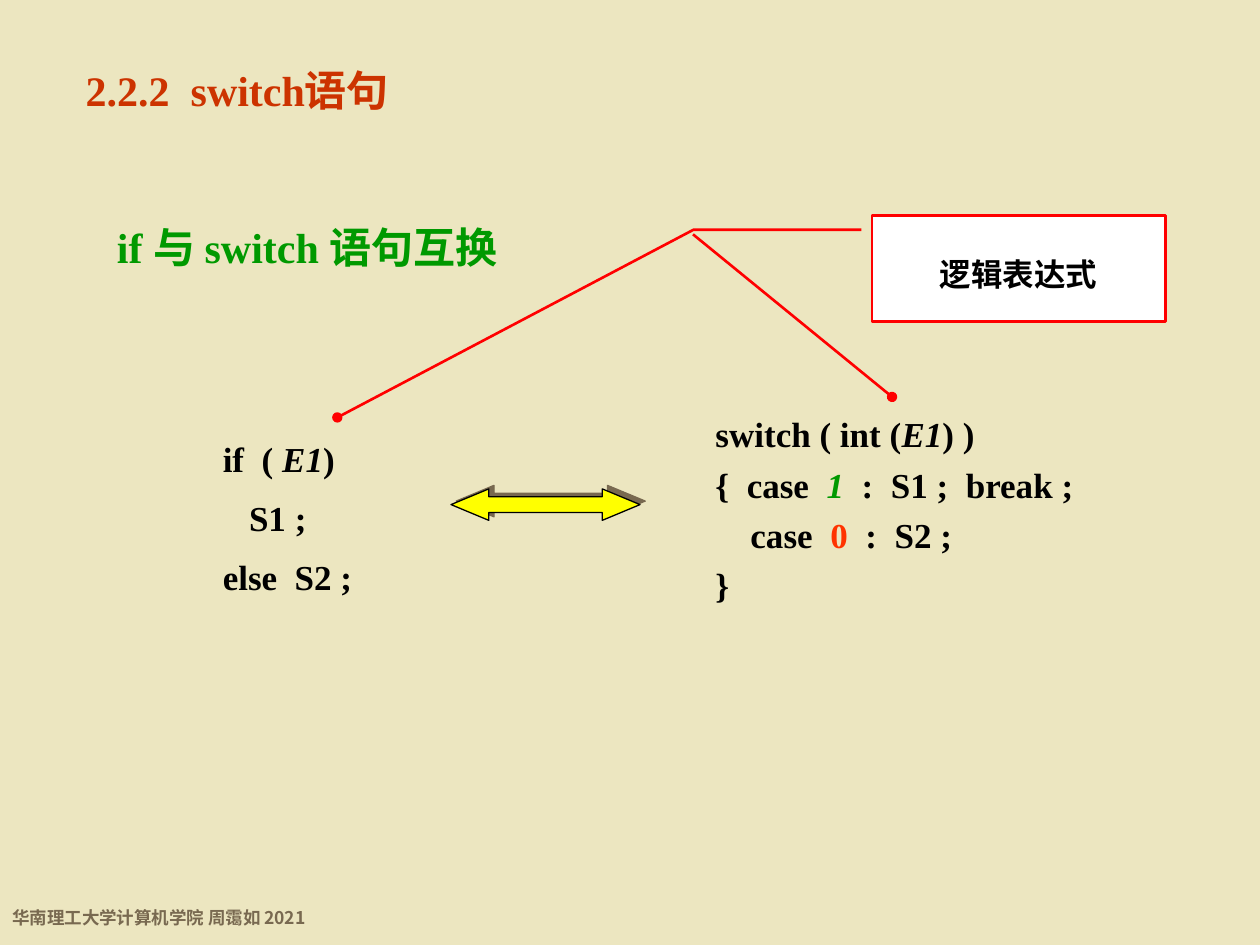
from pptx import Presentation
from pptx.dml.color import RGBColor
from pptx.enum.shapes import MSO_CONNECTOR, MSO_SHAPE
from pptx.enum.text import MSO_ANCHOR, MSO_AUTO_SIZE, PP_ALIGN
from pptx.oxml import parse_xml
from pptx.oxml.ns import nsdecls, qn
from pptx.util import Inches, Pt

SERIF, SANS = "Times New Roman", "Noto Sans CJK SC"
BLACK, RED, GREEN, BROWN = "000000", "FF0000", "009900", "786950"


def rgb(value):
    return RGBColor.from_string(value)


def box(*lengths):
    return [Inches(v) for v in lengths]


def write(tf, lines, size, color=BLACK, font=SERIF, spacing=1.0,
          align=PP_ALIGN.LEFT, wrap=True, fit=MSO_AUTO_SIZE.NONE):
    """Fill a frame; a line is a list of (text, font changes) pairs."""
    tf.word_wrap, tf.auto_size = wrap, fit
    tf.vertical_anchor = MSO_ANCHOR.MIDDLE
    for i, line in enumerate(lines):
        p = tf.paragraphs[0] if i == 0 else tf.add_paragraph()
        p.alignment, p.line_spacing = align, spacing
        for text, changes in line:
            r = p.add_run()
            r.text = text
            look = {"name": font, "size": Pt(size), "bold": True,
                    "italic": False, "color": color} | changes
            r.font.color.rgb = rgb(look.pop("color"))
            for name, value in look.items():
                setattr(r.font, name, value)
            ea = r.font._element.makeelement(qn("a:ea"), {"typeface": SANS})
            r.font._element.find(qn("a:latin")).addnext(ea)


def add_text(slide, area, lines, size, **style):
    tf = slide.shapes.add_textbox(*box(*area)).text_frame
    write(tf, lines, size, **style)


def add_title(slide, area, text):
    sp = slide.shapes.title
    sp.left, sp.top, sp.width, sp.height = box(*area)
    write(sp.text_frame, [[(text, {})]], 24, color="CC3300")


def style_line(line, color, width, oval_tail=False):
    line.color.rgb, line.width = rgb(color), Pt(width)
    if oval_tail:
        line._get_or_add_ln().append(
            parse_xml(f'<a:tailEnd {nsdecls("a")} type="oval"/>'))


def add_exchange_arrow(slide, area):
    sp = slide.shapes.add_shape(MSO_SHAPE.LEFT_RIGHT_ARROW, *box(*area))
    sp.adjustments[0], sp.adjustments[1] = 0.5, 1.2
    sp.fill.solid()
    sp.fill.fore_color.rgb = rgb("FFFF00")
    style_line(sp.line, BLACK, 0.75)
    sp._element.spPr.append(parse_xml(
        f'<a:effectLst {nsdecls("a")}><a:outerShdw dist="{Pt(3.6)}" '
        f'dir="{326 * 60000}" algn="ctr" rotWithShape="0">'
        f'<a:srgbClr val="{BROWN}"/></a:outerShdw></a:effectLst>'))


def add_callout(slide, area, text):
    """Callout whose two leaders point at E1 in each code block."""
    left, top, width, height = area
    group = slide.shapes.add_group_shape()
    sp = group.shapes.add_shape(MSO_SHAPE.LINE_CALLOUT_2, *box(*area))
    for i, value in enumerate([0.136, -0.036, 0.136, -0.608, 1.909, -1.821]):
        sp.adjustments[i] = value
    sp.shadow.inherit = False
    sp.fill.solid()
    sp.fill.fore_color.rgb = rgb("FFFFFF")
    style_line(sp.line, RED, 1.5, oval_tail=True)
    write(sp.text_frame, [[(text, {})]], 18, spacing=1.3,
          align=PP_ALIGN.CENTER)

    leader = group.shapes.add_connector(
        MSO_CONNECTOR.STRAIGHT,
        *box(left - 1.42, top + 0.15, left + 0.16, top + 1.44))
    style_line(leader.line, RED, 1.5, oval_tail=True)
    leader._element.spPr.append(parse_xml(f'<a:effectLst {nsdecls("a")}/>'))


def build_slide(prs):
    slide = prs.slides.add_slide(prs.slide_layouts[5])
    slide.background.fill.solid()
    slide.background.fill.fore_color.rgb = rgb("ECE6C0")
    grow = MSO_AUTO_SIZE.SHAPE_TO_FIT_TEXT
    italic, sans = {"italic": True}, {"name": SANS}

    add_text(slide, (0, 7.08, 2.66, 0.34),
             [[("华南理工大学计算机学院 周霭如 2021", {})]], 10,
             color=BROWN, font=SANS, spacing=1.4, wrap=False, fit=grow)
    add_title(slide, (0.58, 0.38, 6.17, 0.67), "2.2.2  switch语句")
    add_text(slide, (5.58, 3.16, 3.58, 1.7), [
        [("switch ( int (", {}), ("E1", italic), (") )", {})],
        [("{  case  ", {}), ("1 ", italic | {"color": GREEN}),
         (" :  S1 ;  break ;", {})],
        [("    case  ", {}), ("0", {"color": "FF3300"}), ("  :  S2 ;", {})],
        [("}", {})],
    ], 20, spacing=1.2, fit=grow)
    add_text(slide, (0.83, 1.71, 4.17, 0.5),
             [[("if ", {}), ("与 ", sans), ("switch ", {}),
               ("语句互换", sans)]], 24, color=GREEN, fit=grow)
    add_text(slide, (1.67, 3.29, 1.3, 1.5), [
        [("if  ( ", {}), ("E1", italic), (")", {})],
        [("   S1 ;", {})],
        [("else  S2 ;", {})],
    ], 20, spacing=1.4, wrap=False, fit=grow)
    add_exchange_arrow(slide, (3.58, 3.88, 1.5, 0.25))
    add_callout(slide, (6.92, 1.71, 2.33, 0.84), "逻辑表达式")


def main():
    prs = Presentation()
    prs.slide_width, prs.slide_height = box(10, 7.5)
    build_slide(prs)
    prs.save("out.pptx")


if __name__ == "__main__":
    main()
